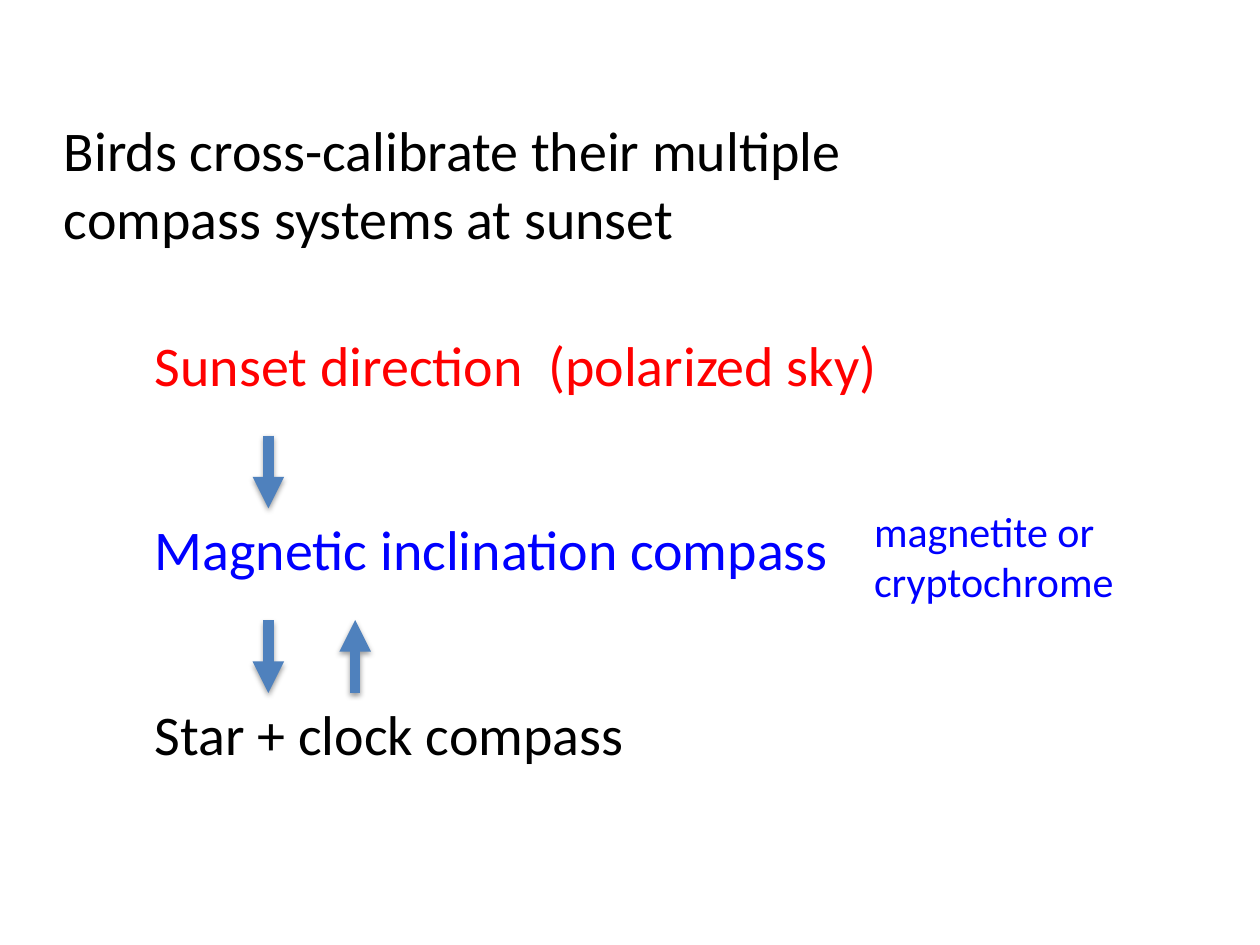
from lxml import etree
from pptx import Presentation
from pptx.dml.color import RGBColor
from pptx.enum.shapes import MSO_CONNECTOR
from pptx.enum.text import MSO_AUTO_SIZE
from pptx.oxml.ns import qn
from pptx.util import Cm, Pt

STRAIGHT = MSO_CONNECTOR.STRAIGHT
FIT_SHAPE = MSO_AUTO_SIZE.SHAPE_TO_FIT_TEXT

TITLE = ["Birds cross-calibrate their multiple", "compass systems at sunset"]
NOTE = ["magnetite or", "cryptochrome"]
COMPASSES = [
    ("Sunset direction  (polarized sky)", "FF0000", 15.21),
    ("Magnetic inclination compass", "0000FF", 14.22),
    ("Star + clock compass", "000000", 10.06),
]
CALIBRATIONS = [(0, 1, 5.41), (1, 2, 5.41), (2, 1, 7.16)]

ROW_LEFT, ROW_TOP, ROW_STEP, ROW_HEIGHT = 2.87, 6.53, 3.72, 1.63
ARROW_OFFSET = 2.25


def color(value):
    return RGBColor.from_string(value)


def add_text(slide, lines, left, top, width, height, size, text_color):
    shape = slide.shapes.add_textbox(Cm(left), Cm(top), Cm(width), Cm(height))
    frame = shape.text_frame
    frame.text = "\n".join(lines)
    frame.word_wrap = False
    frame.auto_size = FIT_SHAPE
    font_format = {"name": "Calibri", "size": Pt(size)}
    for paragraph in frame.paragraphs:
        for run in paragraph.runs:
            for name, value in font_format.items():
                setattr(run.font, name, value)
            run.font.color.rgb = color(text_color)


def add_arrow(slide, x, start, end):
    connector = slide.shapes.add_connector(STRAIGHT, Cm(x), Cm(start), Cm(x), Cm(end))
    connector.line.color.rgb = color("4F81BD")
    connector.line.width = Pt(6)
    properties = connector._element.spPr
    line = properties.find(qn("a:ln"))
    etree.SubElement(line, qn("a:tailEnd"), type="triangle")
    effects = etree.SubElement(properties, qn("a:effectLst"))
    shadow = etree.SubElement(
        effects, qn("a:outerShdw"), blurRad="40000", dist="20000", dir="5400000", rotWithShape="0"
    )
    shadow_color = etree.SubElement(shadow, qn("a:srgbClr"), val="000000")
    etree.SubElement(shadow_color, qn("a:alpha"), val="38000")


def row_top(row):
    return ROW_TOP + row * ROW_STEP


def main():
    presentation = Presentation()
    presentation.slide_width, presentation.slide_height = Cm(25.4), Cm(19.05)
    slide = presentation.slides.add_slide(presentation.slide_layouts[6])

    add_text(slide, TITLE, 1.04, 2.21, 16.33, 3, 32, "000000")
    for row, (label, text_color, width) in enumerate(COMPASSES):
        add_text(slide, [label], ROW_LEFT, row_top(row), width, ROW_HEIGHT, 32, text_color)
    add_text(slide, NOTE, 17.37, 10.06, 5.38, 2.31, 24, "0000FF")

    for source, target, x in CALIBRATIONS:
        upper = row_top(min(source, target)) + ARROW_OFFSET
        lower = row_top(max(source, target))
        start, end = (upper, lower) if source < target else (lower, upper)
        add_arrow(slide, x, start, end)

    presentation.save("out.pptx")


if __name__ == "__main__":
    main()
